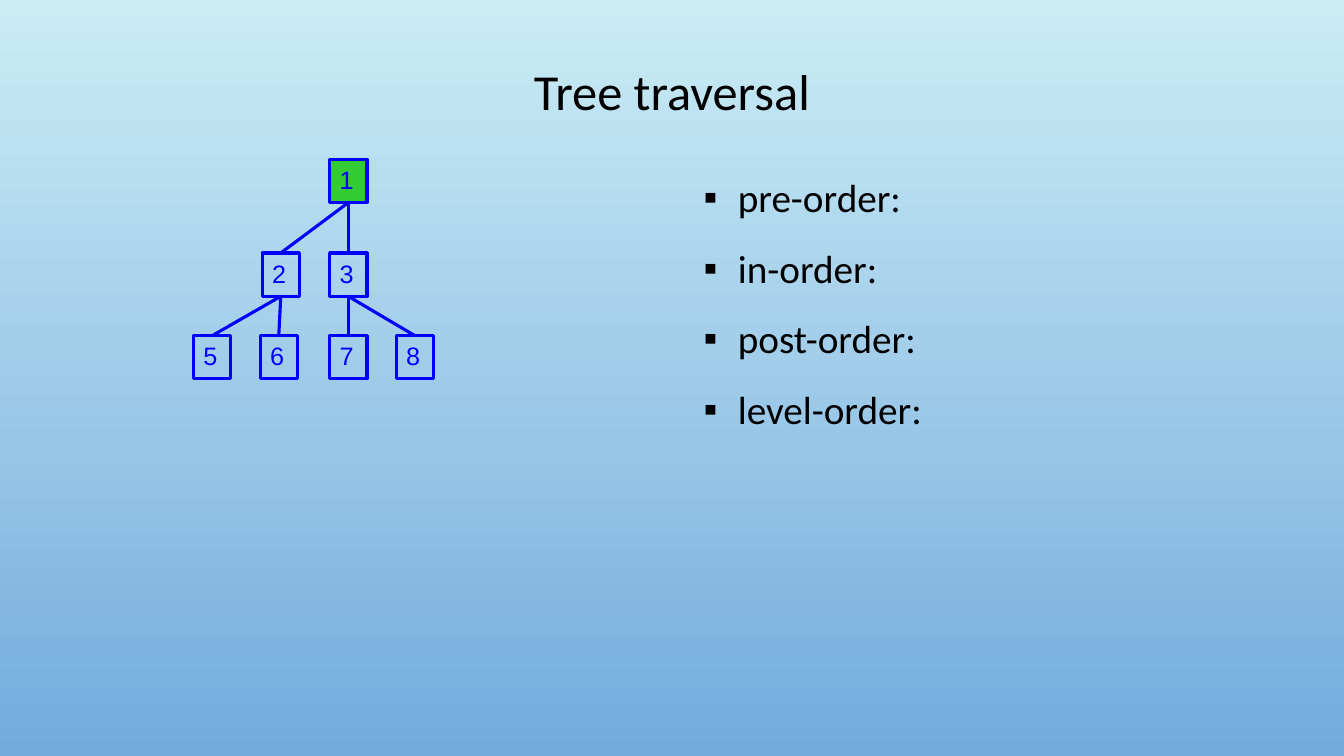
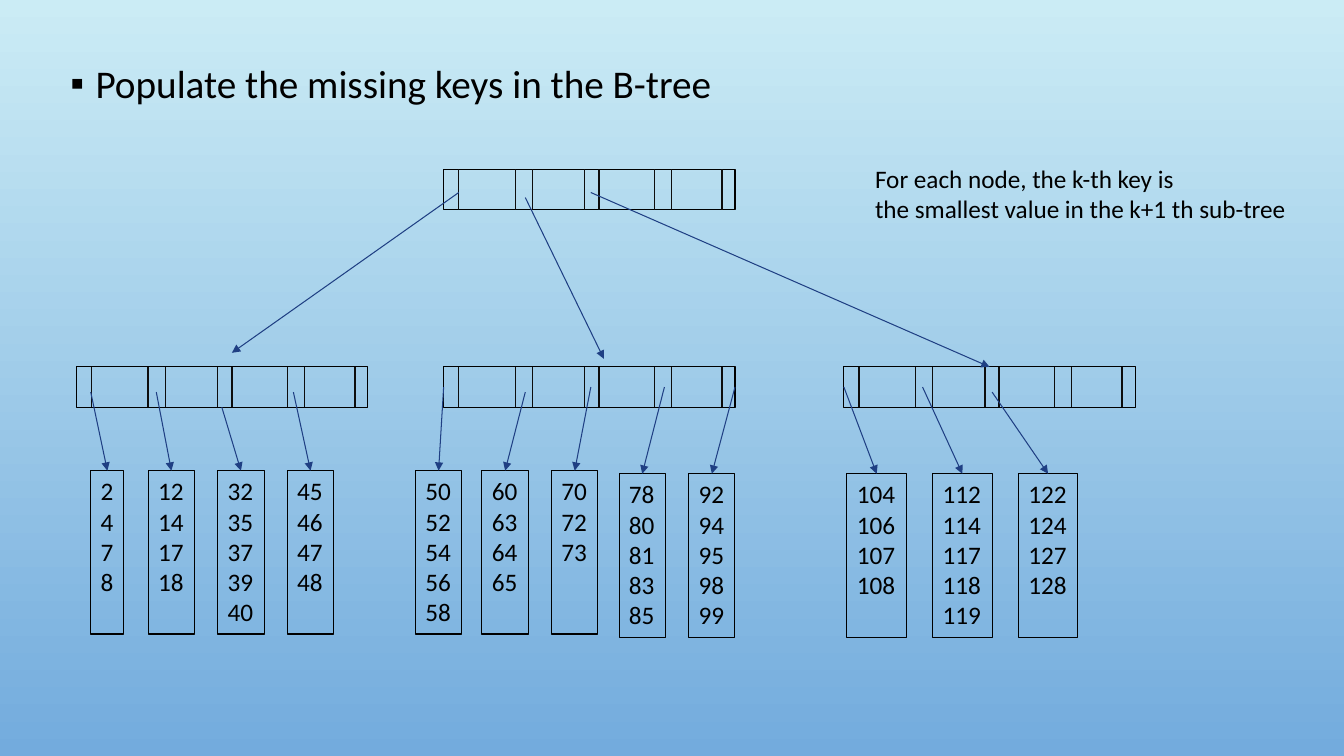
from dataclasses import dataclass
from typing import NamedTuple

from lxml import etree
from pptx import Presentation
from pptx.dml.color import RGBColor
from pptx.enum.shapes import MSO_CONNECTOR as Line, MSO_SHAPE as Form
from pptx.enum.text import MSO_ANCHOR as Anchor, PP_ALIGN as Align
from pptx.oxml.ns import qn
from pptx.util import Inches, Pt

BLACK, BLUE, GREEN = "000000", "0000FF", "33CC33"
CUT, NAVY = "0D0D0D", "1F3F83"
SKY = ("CBECF5", "73ABDD")
TOP, LEFT, BOTTOM, RIGHT = range(4)

TITLE = {"size": Pt(36), "name": "Calibri"}
BODY = {"size": Pt(28), "name": "Calibri"}
NOTE = {"size": Pt(18), "name": "Calibri"}
LABEL = {"size": Pt(18), "name": "Arial"}
FRAME = {"word_wrap": True, "vertical_anchor": Anchor.TOP}
MID = {"word_wrap": True, "vertical_anchor": Anchor.MIDDLE}
TIGHT = {"word_wrap": False, "vertical_anchor": Anchor.TOP}


class Box(NamedTuple):
    x: float
    y: float
    w: float
    h: float


class Dock(NamedTuple):
    """The middle of one side of a shape."""
    shape: object
    side: int


class Spot(NamedTuple):
    x: float
    y: float


@dataclass
class Pen:
    color: str
    width: float
    arrow: bool = False


@dataclass
class Item:
    """A numbered box of the binary tree; up is its parent."""
    key: str
    x: float
    y: float
    up: str = ""


@dataclass
class Leaf:
    x: float
    y: float
    start: Spot | Dock
    keys: str


EDGE = Pen(BLUE, 2.25)
THIN = Pen(BLACK, 0.75)
BAR = Pen(CUT, 1)
ARROW = Pen(NAVY, 0.75, True)

ITEMS = [
    Item("1", 3.27, 1.58),
    Item("2", 2.6, 2.51, "1"), Item("3", 3.27, 2.51, "1"),
    Item("5", 1.92, 3.33, "2"), Item("6", 2.58, 3.33, "2"),
    Item("7", 3.27, 3.33, "3"), Item("8", 3.93, 3.33, "3"),
]
CUTS = (0.15, 0.71, 0.88, 1.4, 1.54, 2.09, 2.26, 2.76)


def ink(code: str) -> RGBColor:
    return RGBColor.from_string(code)


def apply(target, values: dict) -> None:
    for name, value in values.items():
        setattr(target, name, value)


def write(frame, lines: list[str], font: dict, color: str = BLACK,
          setup: dict = FRAME, para: dict | None = None,
          indent: float = 0) -> None:
    """Fill a text frame; an indent makes the lines bullets."""
    apply(frame, setup)
    for n, line in enumerate(lines):
        par = frame.paragraphs[0] if n == 0 else frame.add_paragraph()
        apply(par, {"alignment": Align.LEFT} | (para or {}))
        if indent:
            if n:
                par.space_before = Pt(10)
            mark(par, indent)
        run = par.add_run()
        run.text = line
        apply(run.font, font)
        run.font.color.rgb = ink(color)


def mark(par, indent: float) -> None:
    """Give a paragraph a hanging square bullet."""
    props = par._p.get_or_add_pPr()
    props.set("marL", str(Inches(indent)))
    props.set("indent", str(-Inches(indent)))
    tint = etree.SubElement(props, qn("a:buClr"))
    etree.SubElement(tint, qn("a:srgbClr"), val=BLACK)
    etree.SubElement(props, qn("a:buFont"), typeface="Arial")
    etree.SubElement(props, qn("a:buChar"), char="▪")


def text(slide, box: Box, lines: list[str], font: dict, **style) -> None:
    area = slide.shapes.add_textbox(*map(Inches, box))
    write(area.text_frame, lines, font, **style)


def bullets(slide, box: Box, lines: list[str], indent: float) -> None:
    text(slide, box, lines, BODY, para={"line_spacing": 1.2}, indent=indent)


def rect(slide, box: Box, pen: Pen, fill: str = ""):
    shape = slide.shapes.add_shape(Form.RECTANGLE, *map(Inches, box))
    shape.shadow.inherit = False
    if fill:
        shape.fill.solid()
        shape.fill.fore_color.rgb = ink(fill)
    else:
        shape.fill.background()
    shape.line.color.rgb = ink(pen.color)
    shape.line.width = Pt(pen.width)
    return shape


def link(slide, start: Spot | Dock, end: Spot | Dock, pen: Pen) -> None:
    ends = [Spot(0, 0) if isinstance(e, Dock) else e for e in (start, end)]
    wire = slide.shapes.add_connector(
        Line.STRAIGHT, *(Inches(v) for e in ends for v in e))
    if isinstance(start, Dock):
        wire.begin_connect(*start)
    if isinstance(end, Dock):
        wire.end_connect(*end)
    wire.line.color.rgb = ink(pen.color)
    wire.line.width = Pt(pen.width)
    if pen.arrow:
        etree.SubElement(wire.line._get_or_add_ln(), qn("a:tailEnd"),
                         type="triangle")
    etree.SubElement(wire._element.spPr, qn("a:effectLst"))


def node(slide, x: float, y: float):
    """Draw an empty B-tree node with its dividers."""
    high = 0.4
    shape = rect(slide, Box(x, y, 2.89, high), THIN)
    for cut in CUTS:
        link(slide, Spot(x + cut, y), Spot(x + cut, y + high), BAR)
    return shape


def walk(slide) -> None:
    text(slide, Box(1, 0.32, 11.33, 1.23), ["Tree traversal"], TITLE,
         setup=MID, para={"alignment": Align.CENTER, "line_spacing": 0.9})
    bullets(slide, Box(6.88, 1.58, 5.46, 4.75),
            ["pre-order:", "in-order:", "post-order:", "level-order:"], 0.34)
    drawn = {}
    for item in ITEMS:
        shape = rect(slide, Box(item.x, item.y, 0.37, 0.43), EDGE,
                     "" if item.up else GREEN)
        write(shape.text_frame, [item.key], LABEL, BLUE, TIGHT)
        drawn[item.key] = shape
        if item.up:
            link(slide, Dock(drawn[item.up], BOTTOM), Dock(shape, TOP), EDGE)


def btree(slide) -> None:
    bullets(slide, Box(0.6, 0.45, 11.33, 1.24),
            ["Populate the missing keys in the B-tree"], 0.25)
    node(slide, 4.4, 1.68)
    _, mid, last = [node(slide, x, 3.64) for x in (0.76, 4.4, 8.37)]
    link(slide, Spot(4.55, 1.91), Spot(2.3, 3.5), ARROW)
    link(slide, Spot(5.21, 1.96), Spot(5.99, 3.56), ARROW)
    link(slide, Spot(5.86, 1.91), Dock(last, TOP), ARROW)

    leaves = [
        Leaf(0.9, 4.67, Spot(0.9, 3.89), "2 4 7 8"),
        Leaf(1.47, 4.67, Spot(1.55, 3.89), "12 14 17 18"),
        Leaf(2.16, 4.67, Spot(2.2, 4.04), "32 35 37 39 40"),
        Leaf(2.85, 4.67, Spot(2.91, 3.89), "45 46 47 48"),
        Leaf(4.12, 4.67, Dock(mid, LEFT), "50 52 54 56 58"),
        Leaf(4.78, 4.67, Spot(5.21, 3.89), "60 63 64 65"),
        Leaf(5.47, 4.67, Spot(5.86, 3.84), "70 72 73"),
        Leaf(6.14, 4.7, Spot(6.59, 3.84), "78 80 81 83 85"),
        Leaf(6.83, 4.7, Dock(mid, RIGHT), "92 94 95 98 99"),
        Leaf(8.4, 4.7, Dock(last, LEFT), "104 106 107 108"),
        Leaf(9.25, 4.7, Spot(9.15, 3.84), "112 114 117 118 119"),
        Leaf(10.1, 4.7, Spot(9.84, 3.89), "122 124 127 128"),
    ]
    for leaf in leaves:
        keys = leaf.keys.split()
        wide = 0.2 + 0.13 * len(keys[0])
        shape = rect(slide, Box(leaf.x, leaf.y, wide, 1.62), THIN)
        write(shape.text_frame, keys, NOTE, setup=TIGHT)
        link(slide, leaf.start, Dock(shape, TOP), ARROW)

    text(slide, Box(8.58, 1.57, 4.32, 0.71),
         ["For each node, the k-th key is",
          "the smallest value in the k+1 th sub-tree"], NOTE, setup=TIGHT)


def main() -> None:
    deck = Presentation()
    deck.slide_width, deck.slide_height = Inches(13.33), Inches(7.5)
    back = deck.slide_master.background.fill
    back.gradient()
    back.gradient_angle = 270
    for stop, code in zip(back.gradient_stops, SKY):
        stop.color.rgb = ink(code)
    for draw in (walk, btree):
        draw(deck.slides.add_slide(deck.slide_layouts[6]))
    deck.save("out.pptx")


if __name__ == "__main__":
    main()
